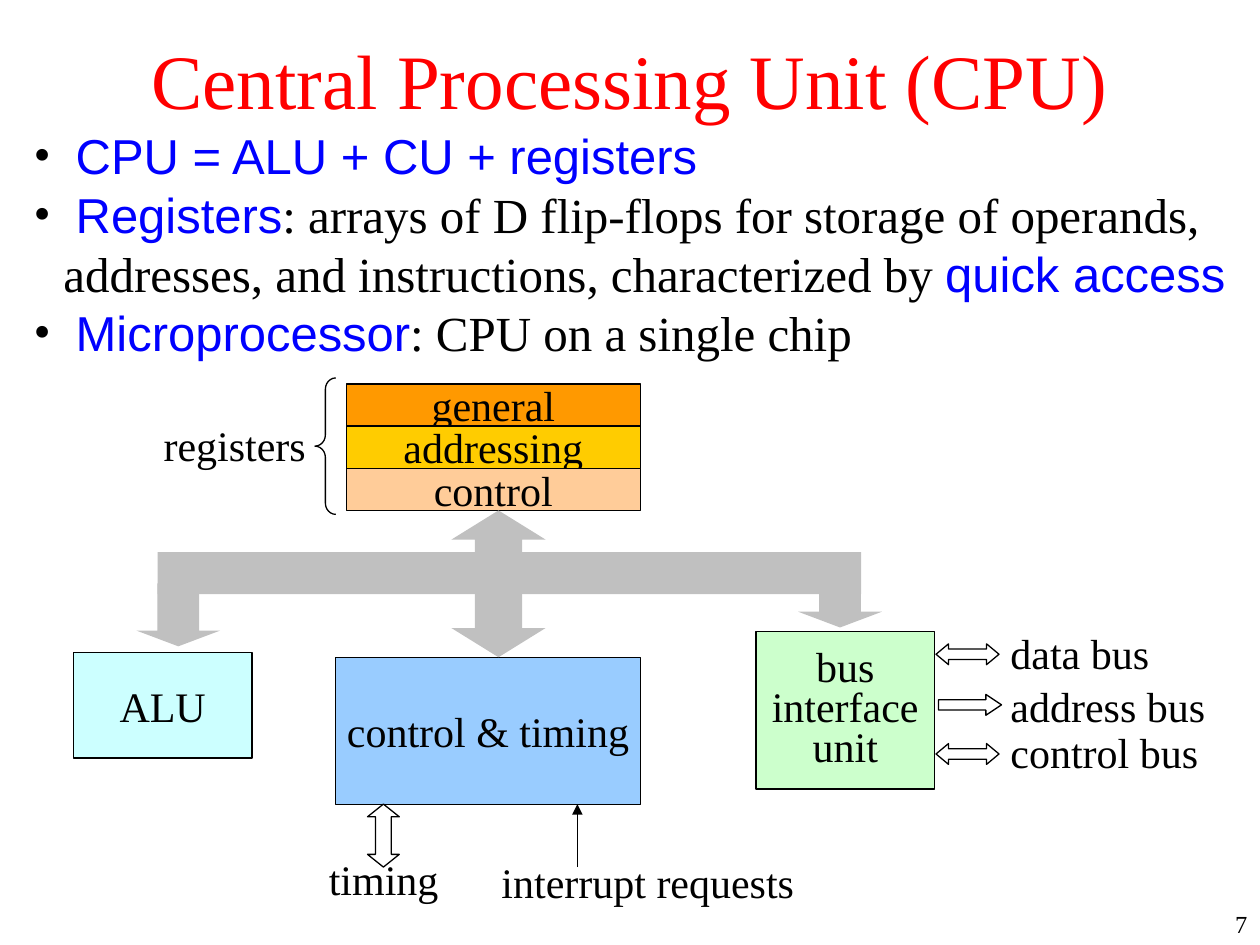
from dataclasses import dataclass

from lxml import etree
from pptx import Presentation
from pptx import util as u
from pptx.dml.color import RGBColor
from pptx.enum import shapes, text
from pptx.oxml import ns
from pptx.util import Cm

Kind = shapes.MSO_SHAPE
Align = text.PP_ALIGN


@dataclass(frozen=True)
class Theme:
    serif: str = "Times New Roman"
    sans: str = "Arial"
    ink: str = "000000"
    title: str = "FF0000"
    term: str = "0000FF"
    bus: str = "C0C0C0"
    title_size: int = 44
    body_size: int = 28
    label_size: int = 24
    number_size: int = 14
    line: float = 0.75


THEME = Theme()


def rgb(code):
    return RGBColor.from_string(code)


def style(span, size, color=THEME.ink, font=THEME.serif):
    span.font.size = u.Pt(size)
    span.font.name = font
    span.font.color.rgb = rgb(color)


def write(box, words, size=THEME.label_size, color=THEME.ink, align=Align.LEFT, spacing=None):
    box.text_frame.text = words
    for para in box.text_frame.paragraphs:
        para.alignment = align
        if spacing:
            para.line_spacing = spacing
        for span in para.runs:
            style(span, size, color)


def add_title(page, words):
    title = page.shapes.title
    title.left, title.top, title.width, title.height = Cm(1.9), Cm(0), Cm(21.6), Cm(3.18)
    title.text_frame.vertical_anchor = text.MSO_ANCHOR.MIDDLE
    write(title, words, THEME.title_size, THEME.title, Align.CENTER)


def add_text(page, words, left, top, width, size=THEME.label_size, align=Align.LEFT):
    box = page.shapes.add_textbox(Cm(left), Cm(top), Cm(width), Cm(1.27))
    write(box, words, size, align=align)
    return box


def add_label(page, words, left, top, width):
    """Add one line of text in a box that fits it and never wraps."""
    frame = add_text(page, words, left, top, width).text_frame
    frame.word_wrap = False
    frame.auto_size = text.MSO_AUTO_SIZE.SHAPE_TO_FIT_TEXT


def add_bullets(page, items):
    """Each item is a list of (words, is_term) pairs; terms are blue sans."""
    box = page.shapes.add_textbox(Cm(0.43), Cm(2.41), Cm(24.77), Cm(4.95))
    frame = box.text_frame
    frame.word_wrap = True
    for index, item in enumerate(items):
        para = frame.paragraphs[0] if index == 0 else frame.add_paragraph()
        props = para._p.get_or_add_pPr()
        props.set("marL", str(Cm(0.6)))
        props.set("indent", str(-Cm(0.6)))
        etree.SubElement(props, ns.qn("a:buFont")).set("typeface", THEME.serif)
        etree.SubElement(props, ns.qn("a:buChar")).set("char", "•")
        for words, is_term in [(" ", False)] + item:
            span = para.add_run()
            span.text = words
            if is_term:
                style(span, THEME.body_size, THEME.term, THEME.sans)
            else:
                style(span, THEME.body_size)


def add_figure(page, kind, left, top, width, height, fill=None, outlined=True, adjust=()):
    """Add a preset shape; adjust holds its adj1 and adj2 as fractions."""
    shape = page.shapes.add_shape(kind, Cm(left), Cm(top), Cm(width), Cm(height))
    shape.shadow.inherit = False
    if adjust:
        guides = [(f"adj{n}", round(value * 100000)) for n, value in enumerate(adjust, 1)]
        shape._element.spPr.find(ns.qn("a:prstGeom")).rewrite_guides(guides)
    if fill:
        shape.fill.solid()
        shape.fill.fore_color.rgb = rgb(fill)
    else:
        shape.fill.background()
    if outlined:
        shape.line.color.rgb = rgb(THEME.ink)
        shape.line.width = u.Pt(THEME.line)
    else:
        shape.line.fill.background()
    return shape


def add_unit(page, words, left, top, width, height, fill, spacing=None):
    unit = add_figure(page, Kind.RECTANGLE, left, top, width, height, fill)
    unit.text_frame.word_wrap = False
    unit.text_frame.vertical_anchor = text.MSO_ANCHOR.MIDDLE
    write(unit, words, align=Align.CENTER, spacing=spacing)


def add_arrow_line(page, x, start, end):
    line = page.shapes.add_connector(
        shapes.MSO_CONNECTOR.STRAIGHT, Cm(x), Cm(start), Cm(x), Cm(end))
    line.line.color.rgb = rgb(THEME.ink)
    line.line.width = u.Pt(THEME.line)
    etree.SubElement(line.line._get_or_add_ln(), ns.qn("a:tailEnd")).set("type", "triangle")
    etree.SubElement(line._element.spPr, ns.qn("a:effectLst"))


def add_registers(page):
    height = 0.85
    rows = [("general", "FF9900"), ("addressing", "FFCC00"), ("control", "FFCC99")]
    for index, (words, fill) in enumerate(rows):
        add_unit(page, words, 6.98, 7.74 + index * height, 5.93, height, fill)
    add_figure(page, Kind.LEFT_BRACE, 6.35, 7.62, 0.42, 2.75, adjust=(0.54, 0.5))
    add_label(page, "registers", 3.05, 8.33, 3.38)


def add_internal_bus(page):
    parts = [
        (Kind.UP_DOWN_ARROW, 9.1, 10.29, 1.9, 2.96, (0.5, 0.31)),
        (Kind.DOWN_ARROW, 2.75, 11.76, 1.69, 1.27, (0.5, 0.25)),
        (Kind.DOWN_ARROW, 16.09, 11.38, 1.69, 1.27, (0.5, 0.25)),
        (Kind.RECTANGLE, 3.18, 11.13, 14.18, 0.85, ()),
    ]
    for kind, left, top, width, height, adjust in parts:
        add_figure(page, kind, left, top, width, height, THEME.bus, False, adjust)


def add_external_buses(page):
    buses = [
        ("data bus", 12.52, 3.3, Kind.LEFT_RIGHT_ARROW, 18.87, 12.98, 0.6),
        ("address bus", 13.59, 4.45, Kind.RIGHT_ARROW, 18.92, 14.0, 0.75),
        ("control bus", 14.53, 4.29, Kind.LEFT_RIGHT_ARROW, 18.87, 14.99, 0.6),
    ]
    for words, label_top, width, kind, left, top, head in buses:
        add_figure(page, kind, left, top, 1.27, 0.42, adjust=(0.5, head))
        add_label(page, words, 20.12, label_top, width)


def main():
    deck = Presentation()
    deck.slide_width, deck.slide_height = Cm(25.4), Cm(19.05)
    page = deck.slides.add_slide(deck.slide_layouts[5])

    add_title(page, "Central Processing Unit (CPU)")
    add_bullets(page, [
        [("CPU = ALU + CU + registers", True)],
        [("Registers", True),
         (": arrays of D flip-flops for storage of operands, addresses, "
          "and instructions, characterized by ", False),
         ("quick access", True)],
        [("Microprocessor", True), (": CPU on a single chip", False)],
    ])
    add_registers(page)
    add_unit(page, "control & timing", 6.77, 13.26, 6.14, 2.96, "99CCFF")
    add_unit(page, "ALU", 1.48, 13.16, 3.6, 2.12, "CCFFFF")
    add_unit(page, "bus\ninterface\nunit", 15.24, 12.73, 3.6, 3.18, "CCFFCC", 0.8)
    add_internal_bus(page)
    add_external_buses(page)
    add_figure(page, Kind.UP_DOWN_ARROW, 7.41, 16.21, 0.64, 1.27, adjust=(0.5, 0.4))
    add_arrow_line(page, 11.64, 17.48, 16.21)
    add_label(page, "timing", 6.38, 17.09, 2.72)
    add_label(page, "interrupt requests", 9.86, 17.15, 6.42)
    add_text(page, "7", 20.12, 18.21, 5.28, THEME.number_size, Align.RIGHT)

    deck.save("out.pptx")


if __name__ == "__main__":
    main()
